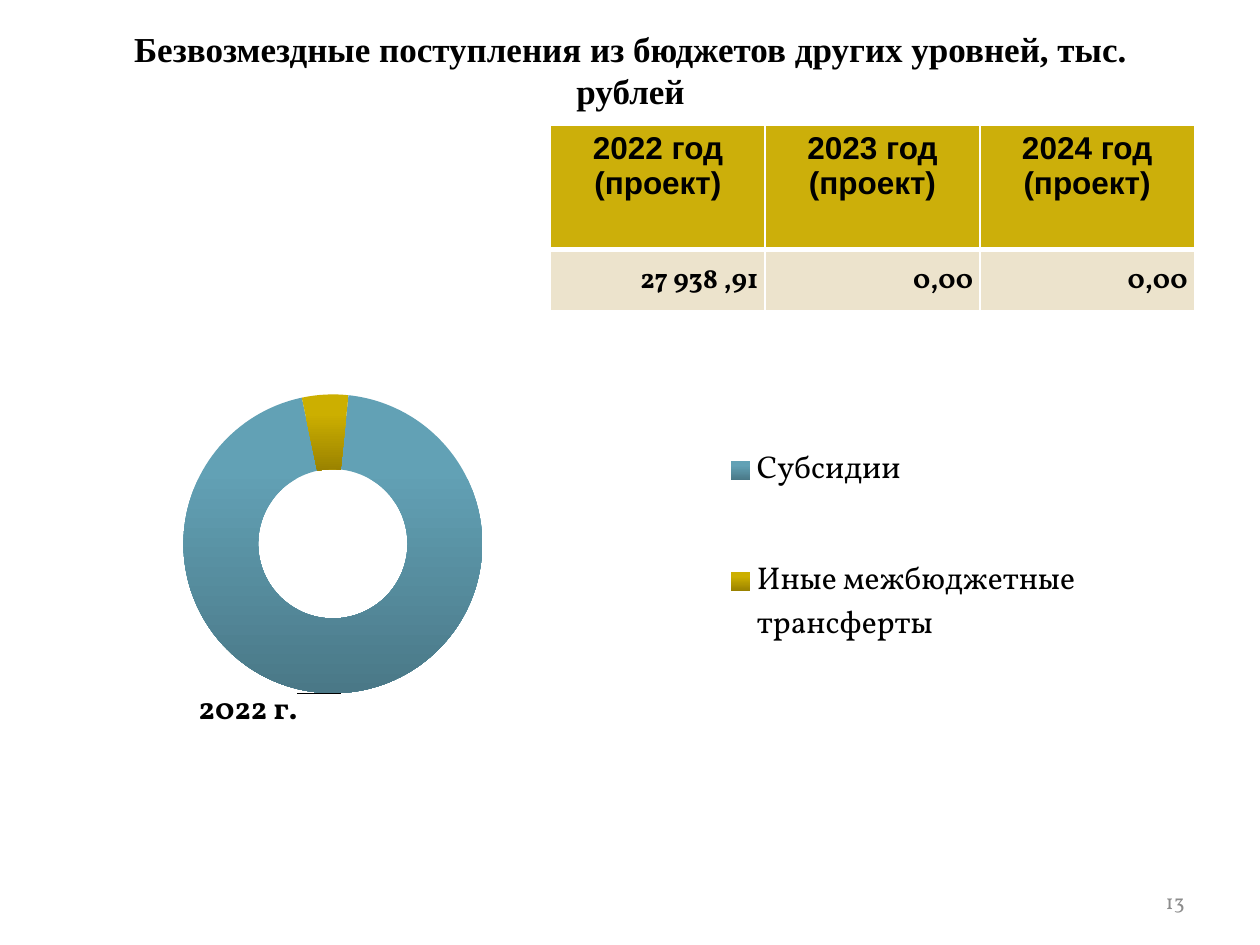
from pptx import Presentation
from pptx.chart.data import CategoryChartData
from pptx.dml.color import RGBColor
from pptx.enum.chart import XL_CHART_TYPE as ChartType, XL_LEGEND_POSITION as LegendPos
from pptx.enum.text import MSO_ANCHOR as Anchor, PP_ALIGN as Align
from pptx.oxml import parse_xml
from pptx.oxml.ns import nsdecls
from pptx.util import Inches, Pt

BLACK, WHITE, GREY = "000000", "FFFFFF", "8C8C8C"
GOLD, CREAM = "CCAF0A", "ECE3CC"
SLICES = [("62A1B5", "4A7887"), ("CCAF00", "9A8200")]


def rgb(value):
    return RGBColor.from_string(value)


def layout_xml(x, y, w=None, h=None, inner=False):
    """Manual chart layout in fractions of the chart area."""
    parts = '<c:layoutTarget val="inner"/>' if inner else ""
    if w is not None:
        parts += '<c:xMode val="edge"/><c:yMode val="edge"/>'
    for tag, value in zip("xywh", (x, y, w, h)):
        if value is not None:
            parts += f'<c:{tag} val="{value}"/>'
    return parse_xml(f'<c:layout {nsdecls("c")}><c:manualLayout>{parts}'
                     "</c:manualLayout></c:layout>")


class SlideBuilder:
    body_font = "Vollkorn"

    def __init__(self, prs):
        self.slide = prs.slides.add_slide(prs.slide_layouts[5])

    def add_text(self, tf, text, size, font=None, color=BLACK, bold=False, align=Align.LEFT):
        p = tf.paragraphs[0]
        p.alignment = align
        r = p.add_run()
        r.text = text
        r.font.size, r.font.bold = Pt(size), bold
        r.font.name = font or self.body_font
        r.font.color.rgb = rgb(color)

    def title(self, text, box):
        sp = self.slide.shapes.title
        sp.left, sp.top, sp.width, sp.height = map(Inches, box)
        tf = sp.text_frame
        tf.vertical_anchor = Anchor.MIDDLE
        self.add_text(tf, text, 20, "Times New Roman", bold=True, align=Align.CENTER)

    def page_number(self, text, box):
        tf = self.slide.shapes.add_textbox(*map(Inches, box)).text_frame
        tf.word_wrap = True
        tf.vertical_anchor = Anchor.MIDDLE
        self.add_text(tf, text, 12, color=GREY, align=Align.RIGHT)

    def doughnut(self, categories, series, box):
        data = CategoryChartData()
        data.categories = categories
        for name, values in series:
            data.add_series(name, values)
        chart = self.slide.shapes.add_chart(
            ChartType.DOUGHNUT, *map(Inches, box), data).chart
        chart.has_title = False
        chart.font.size, chart.font.name = Pt(18), self.body_font
        chart.font.color.rgb = rgb(BLACK)

        # Rings
        plot = chart.plots[0]
        plot.vary_by_categories = True
        ring = plot._element
        ring.xpath("c:firstSliceAng")[0].set("val", "6")
        ring.xpath("c:holeSize")[0].set("val", "10")
        area = chart._chartSpace.xpath("c:chart/c:plotArea")[0]
        for old in area.xpath("c:layout"):
            area.remove(old)
        area.insert(0, layout_xml(0, 0.165, 0.502, 0.779, inner=True))
        for ser in plot.series:
            for i, colors in enumerate(SLICES):
                self.gradient(ser.points[i].format.fill, colors)

        # Series name beside the first slice
        ser = plot.series[0]
        ser.data_labels.show_value = False
        ser.points[0].data_label.font.bold = True
        label = ser._element.xpath("c:dLbls/c:dLbl")[0]
        label.xpath("c:showVal")[0].set("val", "0")
        label.xpath("c:showSerName")[0].set("val", "1")
        label.insert(1, layout_xml(-0.076, 0.073))

        # Legend
        chart.has_legend = True
        legend = chart.legend
        legend.position = LegendPos.RIGHT
        legend.include_in_layout = False
        legend.font.size, legend.font.name = Pt(18), self.body_font
        for old in legend._element.xpath("c:layout"):
            legend._element.remove(old)
        legend._element.insert(1, layout_xml(0.56, 0.343, 0.34, 0.434))

    def gradient(self, fill, colors):
        fill.gradient()
        fill.gradient_angle = 270
        for stop, color, position in zip(fill.gradient_stops, colors, (0.25, 1)):
            stop.color.rgb = rgb(color)
            stop.position = position

    def table(self, header, values, box, heights):
        tbl = self.slide.shapes.add_table(2, len(header), *map(Inches, box)).table
        for row, height in zip(tbl.rows, heights):
            row.height = Inches(height)
        for col, (head, value) in enumerate(zip(header, values)):
            cell = tbl.cell(0, col)
            self.cell_style(cell, GOLD, bottom=3)
            self.add_text(cell.text_frame, head, 18, "Arial", bold=True, align=Align.CENTER)

            cell = tbl.cell(1, col)
            self.cell_style(cell, CREAM, top=3)
            cell.vertical_anchor = Anchor.MIDDLE
            cell.margin_left = cell.margin_top = cell.margin_right = Inches(0.01)
            cell.margin_bottom = 0
            self.add_text(cell.text_frame, value, 16, bold=True, align=Align.RIGHT)

    def cell_style(self, cell, color, top=1, bottom=1):
        tc_pr = cell._tc.get_or_add_tcPr()
        for side, width in zip("LRTB", (1, 1, top, bottom)):
            tc_pr.append(parse_xml(
                f'<a:ln{side} {nsdecls("a")} w="{Pt(width)}"><a:solidFill>'
                f'<a:srgbClr val="{WHITE}"/></a:solidFill></a:ln{side}>'))
        cell.fill.solid()
        cell.fill.fore_color.rgb = rgb(color)


def main():
    prs = Presentation()
    prs.slide_width, prs.slide_height = Inches(10), Inches(7.5)
    s = SlideBuilder(prs)
    s.title("Безвозмездные поступления из бюджетов других уровней, тыс. рублей",
            (0.53, 0.16, 8.95, 0.78))
    s.doughnut(["Субсидии", "Иные межбюджетные трансферты"],
               [("2022 г.", (95, 5)), ("Series 2", (0, 0)), ("Series 3", (0, 0))],
               (0.27, 0.94, 9.45, 6.09))
    s.table([f"{year} год (проект)" for year in (2022, 2023, 2024)],
            ["27 938 ,91 ", "0,00 ", "0,00 "],
            (4.37, 0.99, 5.11, 1.48), (0.99, 0.49))
    s.page_number("13", (7.17, 6.95, 2.33, 0.4))
    prs.save("out.pptx")


if __name__ == "__main__":
    main()
